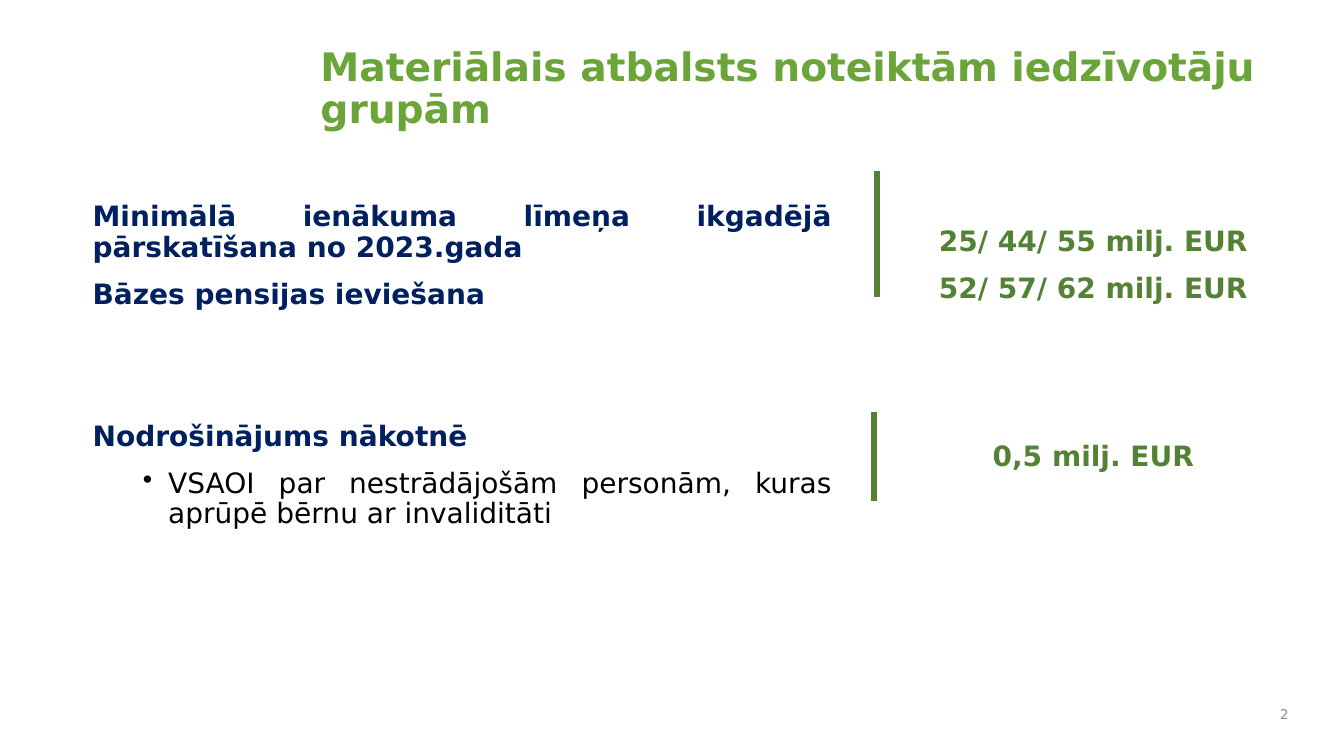
import pptx
import pptx.dml.color
import pptx.enum.shapes
import pptx.enum.text
import pptx.oxml
import pptx.util
from pptx.util import Inches

RGB = pptx.dml.color.RGBColor
LIME = RGB(0x6B, 0xA5, 0x39)
GREEN = RGB(0x54, 0x82, 0x35)
NAVY = RGB(0x00, 0x20, 0x60)
BLACK = RGB(0, 0, 0)
GRAY = RGB(0x8C, 0x8C, 0x8C)
ALIGN = pptx.enum.text.PP_ALIGN
ANCHOR = pptx.enum.text.MSO_ANCHOR
FONT = "DejaVu Sans"
DROP = 0.56


def add_box(slide, left, top, width, height, inset=0.05):
    """Add an empty wrapped text box and return its frame."""
    box = slide.shapes.add_textbox(
        Inches(left), Inches(top), Inches(width), Inches(height))
    frame = box.text_frame
    frame.word_wrap = True
    frame.margin_top = Inches(inset)
    return frame


def add_para(frame, text, color, size=20, bold=True, align=ALIGN.LEFT,
             before=12, line=0.9, bullet=False):
    """Add one formatted paragraph to a frame."""
    first = not frame.paragraphs[0].runs
    para = frame.paragraphs[0] if first else frame.add_paragraph()
    para.alignment = align
    para.line_spacing = line
    para.space_before = pptx.util.Pt(0 if first else before)
    if bullet:
        props = para._p.get_or_add_pPr()
        props.set("marL", str(Inches(0.75)))
        props.set("indent", str(Inches(-0.25)))
        mark = pptx.oxml.parse_xml(
            '<a:buChar xmlns:a="http://schemas.openxmlformats.org/'
            'drawingml/2006/main" char="•"/>')
        props.append(mark)
    run = para.add_run()
    run.text = text
    run.font.name = FONT
    run.font.size = pptx.util.Pt(size)
    run.font.bold = bold
    run.font.color.rgb = color


def add_bar(slide, left, top, end):
    """Add a thick vertical green line."""
    bar = slide.shapes.add_connector(
        pptx.enum.shapes.MSO_CONNECTOR.STRAIGHT,
        Inches(left), Inches(top), Inches(left), Inches(end))
    bar.line.color.rgb = GREEN
    bar.line.width = pptx.util.Pt(4.5)
    bar._element.spPr.append(pptx.oxml.parse_xml(
        '<a:effectLst xmlns:a="http://schemas.openxmlformats.org/'
        'drawingml/2006/main"/>'))


def add_sums(slide, top, sums):
    """Add a centred column of amounts."""
    frame = add_box(slide, 8.91, top, 3.87, 1.47, DROP)
    for text in sums:
        add_para(frame, text, GREEN, align=ALIGN.CENTER)


def add_body(slide):
    """Add the justified list of measures."""
    frame = add_box(slide, 0.82, 1.45, 7.53, 5.8, DROP)
    for text, before in (
            ("Minimālā ienākuma līmeņa ikgadējā pārskatīšana no 2023.gada", 0),
            ("Bāzes pensijas ieviešana", 12),
            ("Nodrošinājums nākotnē", 80)):
        add_para(frame, text, NAVY, align=ALIGN.JUSTIFY, before=before)
    add_para(frame, "VSAOI par nestrādājošām personām, kuras aprūpē bērnu "
             "ar invaliditāti", BLACK, bold=False, align=ALIGN.JUSTIFY,
             bullet=True)


def main():
    """Build the slide and save it."""
    deck = pptx.Presentation()
    deck.slide_width = Inches(13.33)
    deck.slide_height = Inches(7.5)
    slide = deck.slides.add_slide(deck.slide_layouts[6])
    title = add_box(slide, 3.08, 0.42, 9.92, 1.13)
    add_para(title, "Materiālais atbalsts noteiktām iedzīvotāju grupām",
             LIME, size=28)
    add_body(slide)
    page = add_box(slide, 12.44, 6.92, 0.44, 0.33)
    page.vertical_anchor = ANCHOR.MIDDLE
    add_para(page, "2", GRAY, size=9.6, bold=False, align=ALIGN.RIGHT, line=1.0)
    add_sums(slide, 1.7, ("25/ 44/ 55 milj. EUR", "52/ 57/ 62 milj. EUR"))
    add_bar(slide, 8.7, 1.7, 2.95)
    add_sums(slide, 3.83, ("0,5 milj. EUR",))
    add_bar(slide, 8.67, 4.09, 4.97)
    deck.save("out.pptx")


if __name__ == "__main__":
    main()
